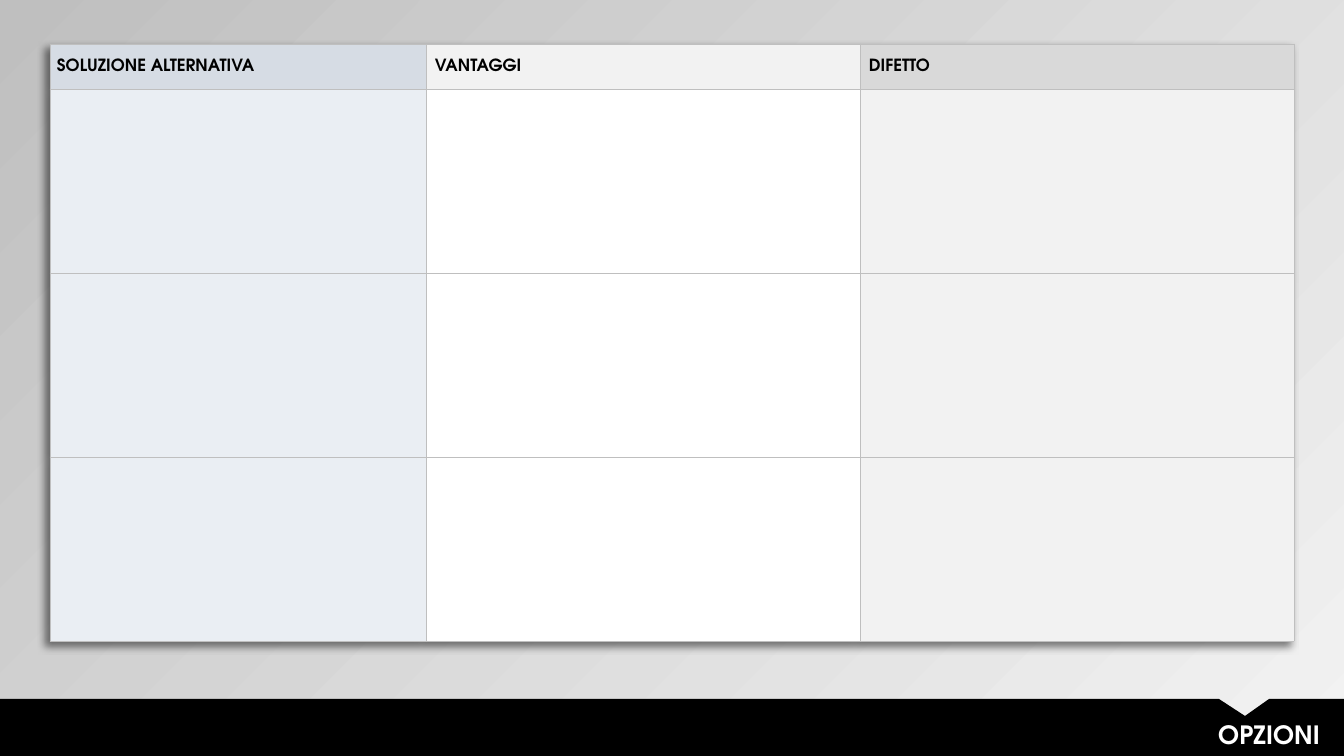
import pptx
import pptx.dml.color
import pptx.enum.text
import pptx.oxml
import pptx.oxml.ns
import pptx.util

PX = 914400 / 100.8  # EMU in one px
FONT = "TeX Gyre Adventor"
COLORS = {
    "black": "000000",
    "white": "FFFFFF",
    "light": "F2F2F2",
    "grey": "D9D9D9",
    "line": "BFBFBF",
    "blue head": "D6DCE4",
    "blue body": "EAEEF3",
}
NAMESPACE = pptx.oxml.ns.nsdecls("a")


def px(length):
    return pptx.util.Emu(round(length * PX))


def write_text(frame, text, size=12, color="black", align="LEFT", margins=(10, 5, 10, 5)):
    frame.margin_left, frame.margin_top, frame.margin_right, frame.margin_bottom = map(px, margins)
    para = frame.paragraphs[0]
    para.alignment = getattr(pptx.enum.text.PP_ALIGN, align)
    span = para.add_run()
    span.text = text
    span.font.name = FONT
    span.font.size = pptx.util.Pt(size)
    span.font.bold = True
    span.font.color.rgb = pptx.dml.color.RGBColor.from_string(COLORS[color])


deck = pptx.Presentation()
deck.slide_width, deck.slide_height = px(1344), px(756)
page = deck.slides.add_slide(deck.slide_layouts[5])

# Background gradient, light at the bottom right
background = page.background.fill
background.gradient()
background.gradient_angle = 135
for stop, name in zip(background.gradient_stops, ("light", "line")):
    stop.color.rgb = pptx.dml.color.RGBColor.from_string(COLORS[name])

# Options table: heading, heading fill, body fill, width, text margins
columns = [
    ("SOLUZIONE ALTERNATIVA", "blue head", "blue body", 376, (7, 0, 7, 0)),
    ("VANTAGGI", "light", "white", 434, (9, 1, 1, 0)),
    ("DIFETTO", "grey", "light", 434, (9, 1, 1, 0)),
]
row_heights = [45, 184, 184, 184]
table = page.shapes.add_table(
    len(row_heights), len(columns), px(50), px(44), px(1244), px(sum(row_heights))
).table
table.first_row = False
table.horz_banding = False
for row, height in zip(table.rows, row_heights):
    row.height = px(height)

for column_index, (heading, head_fill, body_fill, width, margins) in enumerate(columns):
    table.columns[column_index].width = px(width)
    for row_index in range(len(row_heights)):
        cell = table.cell(row_index, column_index)
        properties = cell._tc.get_or_add_tcPr()
        for side in "LRTB":
            properties.append(pptx.oxml.parse_xml(
                f'<a:ln{side} {NAMESPACE} w="6350"><a:solidFill>'
                f'<a:srgbClr val="{COLORS["line"]}"/></a:solidFill></a:ln{side}>'
            ))
        cell.fill.solid()
        fill_name = body_fill if row_index else head_fill
        cell.fill.fore_color.rgb = pptx.dml.color.RGBColor.from_string(COLORS[fill_name])
    head_cell = table.cell(0, column_index)
    head_cell.vertical_anchor = pptx.enum.text.MSO_ANCHOR.MIDDLE
    write_text(head_cell.text_frame, heading, margins=margins)
    # write_text sets margins on the frame; a cell keeps its own
    (head_cell.margin_left, head_cell.margin_top,
     head_cell.margin_right, head_cell.margin_bottom) = map(px, margins)

# Table shadow, falling to the lower left
table._tbl.tblPr.insert(0, pptx.oxml.parse_xml(
    f'<a:effectLst {NAMESPACE}><a:outerShdw blurRad="76200" dist="63500" dir="8100000" '
    f'algn="tr" rotWithShape="0"><a:srgbClr val="{COLORS["black"]}"><a:alpha val="50000"/>'
    '</a:srgbClr></a:outerShdw></a:effectLst>'
))

# Black footer bar with a notch
outline = page.shapes.build_freeform(0, 699, scale=PX)
outline.add_line_segments(
    [(1219, 699), (1245, 716), (1269, 699), (1344, 699), (1344, 756), (0, 756)], close=True
)
bar = outline.convert_to_shape()
bar.shadow.inherit = False
bar.fill.solid()
bar.fill.fore_color.rgb = pptx.dml.color.RGBColor.from_string(COLORS["black"])
bar.line.fill.background()

# Title, brought in front of the bar
title = page.shapes.title
title.left, title.top, title.width, title.height = px(417), px(714), px(913), px(40)
title.text_frame.word_wrap = True
title.text_frame.auto_size = pptx.enum.text.MSO_AUTO_SIZE.SHAPE_TO_FIT_TEXT
title.text_frame.vertical_anchor = pptx.enum.text.MSO_ANCHOR.TOP
write_text(title.text_frame, "OPZIONI", size=18, color="white", align="RIGHT")
bar.element.addnext(title.element)

deck.save("out.pptx")
